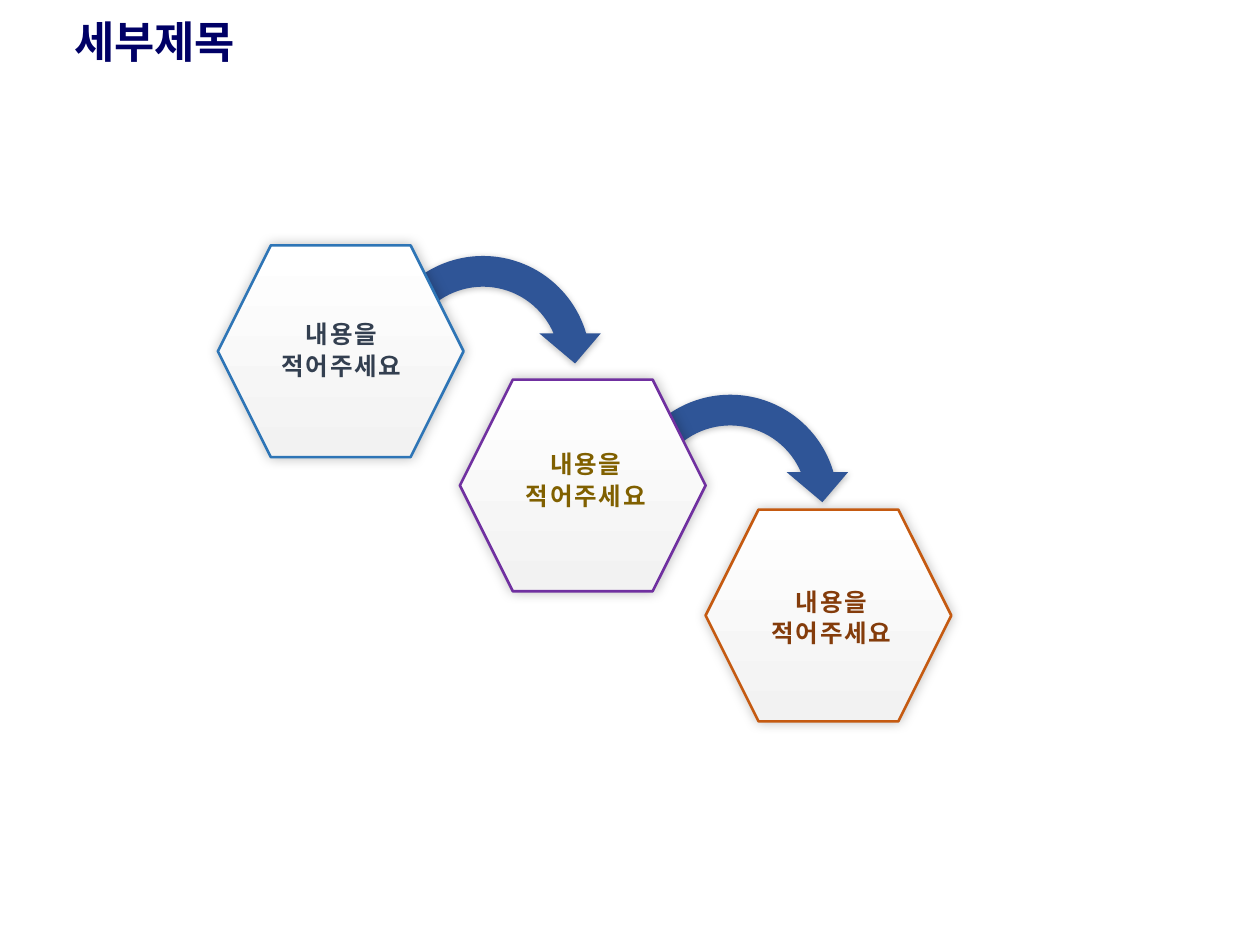
from lxml import etree
from pptx import Presentation
from pptx.dml import color
from pptx.enum import shapes, text
from pptx.oxml import ns
from pptx.util import Pt

KOREAN_FONT = "Noto Sans CJK KR"
STEP_SIZE = (140.4, 121)
ARROW_SIZE = 140.4
STEPS = [
    (124.5, 140.2, "2E75B6", "333F50", (8.7, 37.6)),
    (262.8, 216.9, "7030A0", "806000", (10.1, 35.1)),
    (403.2, 291.2, "C55A11", "843C0B", (10.1, 39.3)),
]
ARROWS = [(347.1, 216.8), (205.8, 137.5)]


def rgb(value):
    return color.RGBColor.from_string(value)


def add_shadow(shape, blur, distance, angle):
    shape.shadow.inherit = False
    effects = shape._element.spPr.find(ns.qn("a:effectLst"))
    shadow = etree.SubElement(
        effects, ns.qn("a:outerShdw"), blurRad=str(Pt(blur)),
        dist=str(Pt(distance)), dir=str(angle * 60000),
        algn="ctr", rotWithShape="0")
    black = etree.SubElement(shadow, ns.qn("a:srgbClr"), val="000000")
    etree.SubElement(black, ns.qn("a:alpha"), val="25000")


def set_font(para, name, size, hex_color):
    font = para.font
    font.name = name
    font.size = Pt(size)
    font.bold = True
    font.color.rgb = rgb(hex_color)


def add_title(page, left, top, width, height):
    box = page.shapes.add_textbox(Pt(left), Pt(top), Pt(width), Pt(height))
    frame = box.text_frame
    frame.word_wrap = True
    frame.vertical_anchor = text.MSO_ANCHOR.MIDDLE
    frame.margin_left = Pt(42.5)
    para = frame.paragraphs[0]
    para.text = "세부제목"
    para.line_spacing = 0.9
    set_font(para, "Calibri", 25, "000066")


def add_arrow(page, left, top, size):
    arrow = page.shapes.add_shape(
        shapes.MSO_SHAPE.CIRCULAR_ARROW, Pt(left), Pt(top), Pt(size), Pt(size))
    arrow.fill.solid()
    arrow.fill.fore_color.rgb = rgb("2F5597")
    arrow.line.fill.background()
    add_shadow(arrow, 4, 1, 90)


def add_hexagon(page, left, top, width, height, line_color):
    hexagon = page.shapes.add_shape(
        shapes.MSO_SHAPE.HEXAGON, Pt(left), Pt(top), Pt(width), Pt(height))
    hexagon.fill.gradient()
    hexagon.fill.gradient_angle = 270
    for stop, shade in zip(hexagon.fill.gradient_stops, ("FFFFFF", "F2F2F2")):
        stop.color.rgb = rgb(shade)
    hexagon.line.color.rgb = rgb(line_color)
    hexagon.line.width = Pt(1.5)
    add_shadow(hexagon, 7, 0, 0)


def add_caption(page, left, top, text_color):
    box = page.shapes.add_textbox(Pt(left), Pt(top), Pt(123.8), Pt(43.9))
    frame = box.text_frame
    frame.word_wrap = True
    frame.auto_size = text.MSO_AUTO_SIZE.SHAPE_TO_FIT_TEXT
    frame.text = "내용을\n적어주세요"
    for para in frame.paragraphs:
        para.alignment = text.PP_ALIGN.CENTER
        para.line_spacing = Pt(18)
        set_font(para, KOREAN_FONT, 14, text_color)
        defaults = para._p.pPr.find(ns.qn("a:defRPr"))
        defaults.set("spc", "100")
        etree.SubElement(defaults, ns.qn("a:ea"), typeface=KOREAN_FONT)


def main():
    deck = Presentation()
    deck.slide_width, deck.slide_height = Pt(720), Pt(540)
    page = deck.slides.add_slide(deck.slide_layouts[6])
    add_title(page, 0, 0, 620.6, 50.4)
    for left, top in ARROWS:
        add_arrow(page, left, top, ARROW_SIZE)
    for left, top, line_color, _, _ in STEPS:
        add_hexagon(page, left, top, *STEP_SIZE, line_color)
    for left, top, _, text_color, (inset_x, inset_y) in STEPS:
        add_caption(page, left + inset_x, top + inset_y, text_color)
    deck.save("out.pptx")


if __name__ == "__main__":
    main()
